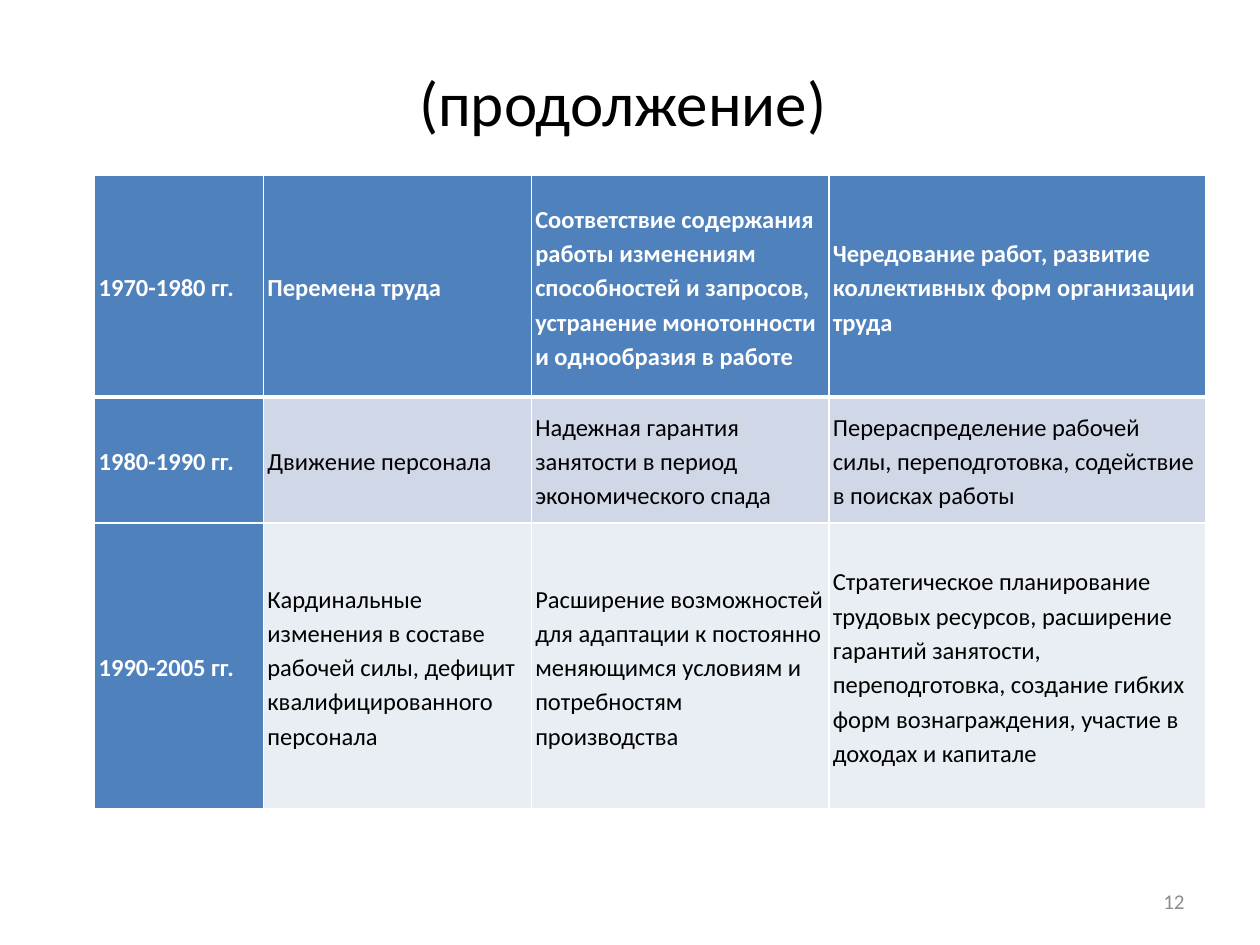
from dataclasses import dataclass

from lxml.etree import SubElement
from pptx import Presentation
from pptx.dml.color import RGBColor
from pptx.enum.text import MSO_ANCHOR, PP_ALIGN
from pptx.oxml.ns import qn
from pptx.util import Cm, Pt


@dataclass(frozen=True)
class Theme:
    font: str = "Calibri"
    title_size: int = 36
    table_size: int = 14
    number_size: int = 12
    black: str = "000000"
    white: str = "FFFFFF"
    gray: str = "8C8C8C"
    header: str = "4F81BD"
    bands: tuple = ("D0D8E8", "E9EDF4")


ROWS = [
    ["1970-1980 гг.", "Перемена труда",
     "Соответствие содержания работы изменениям способностей и запросов, "
     "устранение монотонности и однообразия в работе",
     "Чередование работ, развитие коллективных форм организации труда"],
    ["1980-1990 гг.", "Движение персонала",
     "Надежная гарантия занятости в период экономического спада",
     "Перераспределение рабочей силы, переподготовка, содействие в поисках работы"],
    ["1990-2005 гг.",
     "Кардинальные изменения в составе рабочей силы, дефицит "
     "квалифицированного персонала",
     "Расширение возможностей для адаптации к постоянно меняющимся условиям "
     "и потребностям производства",
     "Стратегическое планирование трудовых ресурсов, расширение гарантий "
     "занятости, переподготовка, создание гибких форм вознаграждения, "
     "участие в доходах и капитале"],
]
COLUMN_WIDTHS = [3.4, 5.4, 6.0, 7.6]
ROW_HEIGHTS = [4.46, 2.54, 5.77]


def write_text(frame, text, *, font, size, color, bold=False,
               align=PP_ALIGN.LEFT, line_spacing=1.0):
    frame.word_wrap = True
    paragraph = frame.paragraphs[0]
    paragraph.alignment = align
    paragraph.line_spacing = line_spacing
    run = paragraph.add_run()
    run.text = text
    run.font.name = font
    run.font.size = Pt(size)
    run.font.bold = bold
    run.font.color.rgb = RGBColor.from_string(color)


def set_borders(cell, color, bottom_width):
    properties = cell._tc.get_or_add_tcPr()
    for side in ("L", "R", "T", "B"):
        width = bottom_width if side == "B" else 1
        line = SubElement(properties, qn(f"a:ln{side}"), w=str(Pt(width)))
        fill = SubElement(line, qn("a:solidFill"))
        SubElement(fill, qn("a:srgbClr"), val=color)


class SlideBuilder:
    def __init__(self, slide, theme):
        self.slide = slide
        self.theme = theme

    def add_text(self, text, left, top, width, height, **text_format):
        shape = self.slide.shapes.add_textbox(
            Cm(left), Cm(top), Cm(width), Cm(height))
        shape.text_frame.vertical_anchor = MSO_ANCHOR.MIDDLE
        write_text(shape.text_frame, text, font=self.theme.font, **text_format)

    def add_table(self, rows, left, top, column_widths, row_heights):
        table = self.slide.shapes.add_table(
            len(rows), len(column_widths), Cm(left), Cm(top),
            Cm(sum(column_widths)), Cm(sum(row_heights))).table
        for column, width in zip(table.columns, column_widths):
            column.width = Cm(width)
        for row, height in zip(table.rows, row_heights):
            row.height = Cm(height)
        for row_index, texts in enumerate(rows):
            for column_index, text in enumerate(texts):
                self.fill_cell(table.cell(row_index, column_index), text,
                               row_index, column_index)

    def fill_cell(self, cell, text, row_index, column_index):
        theme = self.theme
        is_header = row_index == 0 or column_index == 0
        band = theme.bands[(row_index - 1) % len(theme.bands)]
        set_borders(cell, theme.white, 3 if row_index == 0 else 1)
        cell.fill.solid()
        cell.fill.fore_color.rgb = RGBColor.from_string(
            theme.header if is_header else band)
        cell.vertical_anchor = MSO_ANCHOR.MIDDLE
        cell.margin_left = cell.margin_right = Cm(0.08)
        cell.margin_top = cell.margin_bottom = Cm(0)
        write_text(cell.text_frame, text, font=theme.font,
                   size=theme.table_size, bold=is_header, line_spacing=1.15,
                   color=theme.white if is_header else theme.black)


def main():
    presentation = Presentation()
    presentation.slide_width = Cm(25.4)
    presentation.slide_height = Cm(19.05)
    theme = Theme()
    slide = presentation.slides.add_slide(presentation.slide_layouts[6])
    builder = SlideBuilder(slide, theme)
    builder.add_text("(продолжение) ", 1.27, 0.76, 22.86, 2.57,
                     size=theme.title_size, color=theme.black,
                     align=PP_ALIGN.CENTER)
    builder.add_table(ROWS, 1.91, 3.54, COLUMN_WIDTHS, ROW_HEIGHTS)
    builder.add_text("12", 18.2, 17.66, 5.93, 1.01,
                     size=theme.number_size, color=theme.gray,
                     align=PP_ALIGN.RIGHT)
    presentation.save("out.pptx")


if __name__ == "__main__":
    main()
